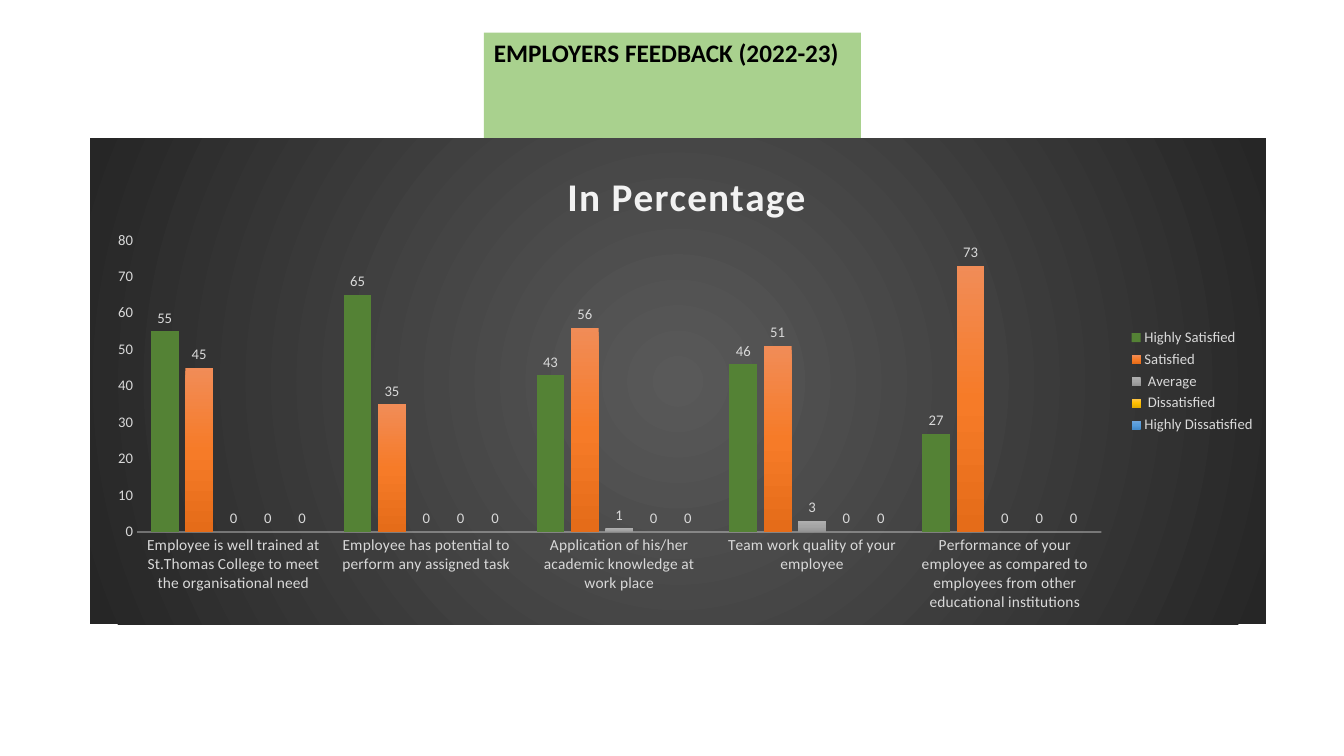
from typing import NamedTuple

from pptx import Presentation
from pptx.chart.data import CategoryChartData
from pptx.dml.color import RGBColor
from pptx.enum.chart import (XL_CHART_TYPE, XL_LABEL_POSITION,
                             XL_LEGEND_POSITION, XL_TICK_MARK)
from pptx.enum.text import MSO_ANCHOR, MSO_AUTO_SIZE, PP_ALIGN
from pptx.oxml import parse_xml
from pptx.oxml.ns import nsdecls
from pptx.util import Inches, Pt

WIDE, HIGH = Inches(13.33), Inches(7.5)
FACE = "Calibri"

BLACK = RGBColor(0x00, 0x00, 0x00)
LIME = RGBColor(0xA9, 0xD1, 0x8E)
PALE = RGBColor(0xF2, 0xF2, 0xF2)
SILVER = RGBColor(0xD9, 0xD9, 0xD9)
GRAY = RGBColor(0x59, 0x59, 0x59)
COAL = RGBColor(0x26, 0x26, 0x26)
GREEN = RGBColor(0x54, 0x82, 0x35)
ORANGE = (RGBColor(0xF1, 0x8C, 0x57), RGBColor(0xF6, 0x7B, 0x28), RGBColor(0xE5, 0x6C, 0x19))
STEEL = (RGBColor(0xAF, 0xAF, 0xAF), RGBColor(0xA5, 0xA5, 0xA5), RGBColor(0x93, 0x93, 0x93))
GOLD = (RGBColor(0xFF, 0xC6, 0x4B), RGBColor(0xFF, 0xC0, 0x00), RGBColor(0xE3, 0xAB, 0x00))
BLUE = (RGBColor(0x71, 0xA6, 0xDB), RGBColor(0x55, 0x9B, 0xDB), RGBColor(0x44, 0x8A, 0xCA))


class Box(NamedTuple):
    """Place and size in percent of the slide."""
    left: float
    top: float
    width: float
    height: float

    def lengths(self) -> tuple:
        sides = (WIDE, HIGH, WIDE, HIGH)
        return tuple(int(side * part / 100) for side, part in zip(sides, self))


class Rating(NamedTuple):
    name: str
    values: tuple
    shades: tuple


HEAD = Box(36, 4.3, 28.05, 5.33)
PANEL = Box(6.7, 18.3, 87.5, 64.3)

TOPICS = (
    "Employee is well trained at St.Thomas College to meet the organisational need",
    "Employee has potential to perform any assigned task",
    "Application of his/her academic knowledge at work place",
    "Team work quality of your employee",
    "Performance of your employee as compared to employees from other educational institutions",
)
RATINGS = (
    Rating("Highly Satisfied", (55, 65, 43, 46, 27), (GREEN,)),
    Rating("Satisfied", (45, 35, 56, 51, 73), ORANGE),
    Rating(" Average", (0, 0, 1, 3, 0), STEEL),
    Rating(" Dissatisfied", (0, 0, 0, 0, 0), GOLD),
    Rating("Highly Dissatisfied", (0, 0, 0, 0, 0), BLUE),
)


def apply(item, **values) -> None:
    for name, value in values.items():
        setattr(item, name, value)


def style(font, size: float, color: RGBColor, bold: bool = False) -> None:
    apply(font, name=FACE, size=Pt(size), bold=bold)
    font.color.rgb = color


def blend(shades: tuple, course: str):
    """Gradient with evenly spaced stops along the given course."""
    step = 100000 // (len(shades) - 1)
    stops = "".join(f'<a:gs pos="{i * step}"><a:srgbClr val="{shade}"/></a:gs>'
                    for i, shade in enumerate(shades))
    return parse_xml(f'<a:gradFill {nsdecls("a")} rotWithShape="1">'
                     f'<a:gsLst>{stops}</a:gsLst>{course}</a:gradFill>')


def place(part, index: int, inner: bool = False, **shares: float) -> None:
    """Fix a chart part at shares of the chart's size."""
    for old in part.xpath("c:layout"):
        part.remove(old)
    rules = {"layoutTarget": "inner"} if inner else {}
    rules.update(xMode="edge", yMode="edge", **shares)
    body = "".join(f'<c:{tag} val="{value}"/>' for tag, value in rules.items())
    part.insert(index, parse_xml(f'<c:layout {nsdecls("c")}><c:manualLayout>{body}'
                                 '</c:manualLayout></c:layout>'))


def add_head(slide) -> None:
    title = slide.shapes.title
    apply(title, **dict(zip(Box._fields, HEAD.lengths())))
    title.fill.solid()
    title.fill.fore_color.rgb = LIME
    frame = title.text_frame
    frame.text = "EMPLOYERS FEEDBACK (2022-23)"
    apply(frame, word_wrap=True, auto_size=MSO_AUTO_SIZE.SHAPE_TO_FIT_TEXT,
          vertical_anchor=MSO_ANCHOR.TOP)
    line = frame.paragraphs[0]
    line.alignment = PP_ALIGN.LEFT
    style(line.runs[0].font, 18, BLACK, True)


def style_axes(chart) -> None:
    for axis, size in ((chart.category_axis, 11), (chart.value_axis, 10.5)):
        apply(axis, major_tick_mark=XL_TICK_MARK.NONE, minor_tick_mark=XL_TICK_MARK.NONE,
              has_major_gridlines=False)
        style(axis.tick_labels.font, size, SILVER)
    apply(chart.value_axis, minimum_scale=0, maximum_scale=80, major_unit=10)
    chart.value_axis.format.line.fill.background()
    base = chart.category_axis.format.line
    base.width = Pt(1)
    base.color.rgb = PALE
    tint = chart.element.xpath("c:chart/c:plotArea/c:catAx/c:spPr/a:ln//a:srgbClr")[0]
    tint.append(parse_xml(f'<a:alpha {nsdecls("a")} val="54000"/>'))


def style_bars(plot) -> None:
    apply(plot, gap_width=100, overlap=-24, vary_by_categories=False)
    for series, rating in zip(plot.series, RATINGS):
        series.invert_if_negative = False
        if len(rating.shades) == 1:
            series.format.fill.solid()
            series.format.fill.fore_color.rgb = rating.shades[0]
        else:
            shape = series._element.get_or_add_spPr()
            shape.append(blend(rating.shades, '<a:lin ang="5400000" scaled="0"/>'))
        labels = series.data_labels
        apply(labels, show_value=True, position=XL_LABEL_POSITION.OUTSIDE_END)
        style(labels.font, 10.5, SILVER)


def add_panel(slide) -> None:
    data = CategoryChartData()
    data.categories = TOPICS
    for rating in RATINGS:
        data.add_series(rating.name, rating.values)
    chart = slide.shapes.add_chart(XL_CHART_TYPE.COLUMN_CLUSTERED, *PANEL.lengths(), data).chart
    style(chart.font, 10, BLACK)

    # Dark backdrop, bright in the centre
    glow = ('<a:path path="circle"><a:fillToRect l="50000" t="50000" '
            'r="50000" b="50000"/></a:path>')
    back = parse_xml(f'<c:spPr {nsdecls("c", "a")}><a:ln><a:noFill/></a:ln></c:spPr>')
    back.insert(0, blend((GRAY, COAL), glow))
    chart.element.xpath("c:chart")[0].addnext(back)

    # Chart title with wide letter spacing
    chart.has_title = True
    frame = chart.chart_title.text_frame
    frame.text = "In Percentage"
    font = frame.paragraphs[0].runs[0].font
    style(font, 28, PALE, True)
    chart.element.xpath("c:chart/c:title//a:r/a:rPr")[0].set("spc", "100")
    place(chart.element.xpath("c:chart/c:title")[0], 1, x=0.4, y=0.05)

    # Legend, axes and bars
    chart.has_legend = True
    apply(chart.legend, position=XL_LEGEND_POSITION.RIGHT, include_in_layout=False)
    style(chart.legend.font, 10.5, SILVER)
    style_axes(chart)
    style_bars(chart.plots[0])
    place(chart.element.xpath("c:chart/c:plotArea")[0], 0, True, x=0.04, y=0.21, w=0.82, h=0.6)


def main() -> None:
    deck = Presentation()
    apply(deck, slide_width=WIDE, slide_height=HIGH)
    slide = deck.slides.add_slide(deck.slide_layouts[5])
    add_head(slide)
    add_panel(slide)
    deck.save("out.pptx")


if __name__ == "__main__":
    main()
